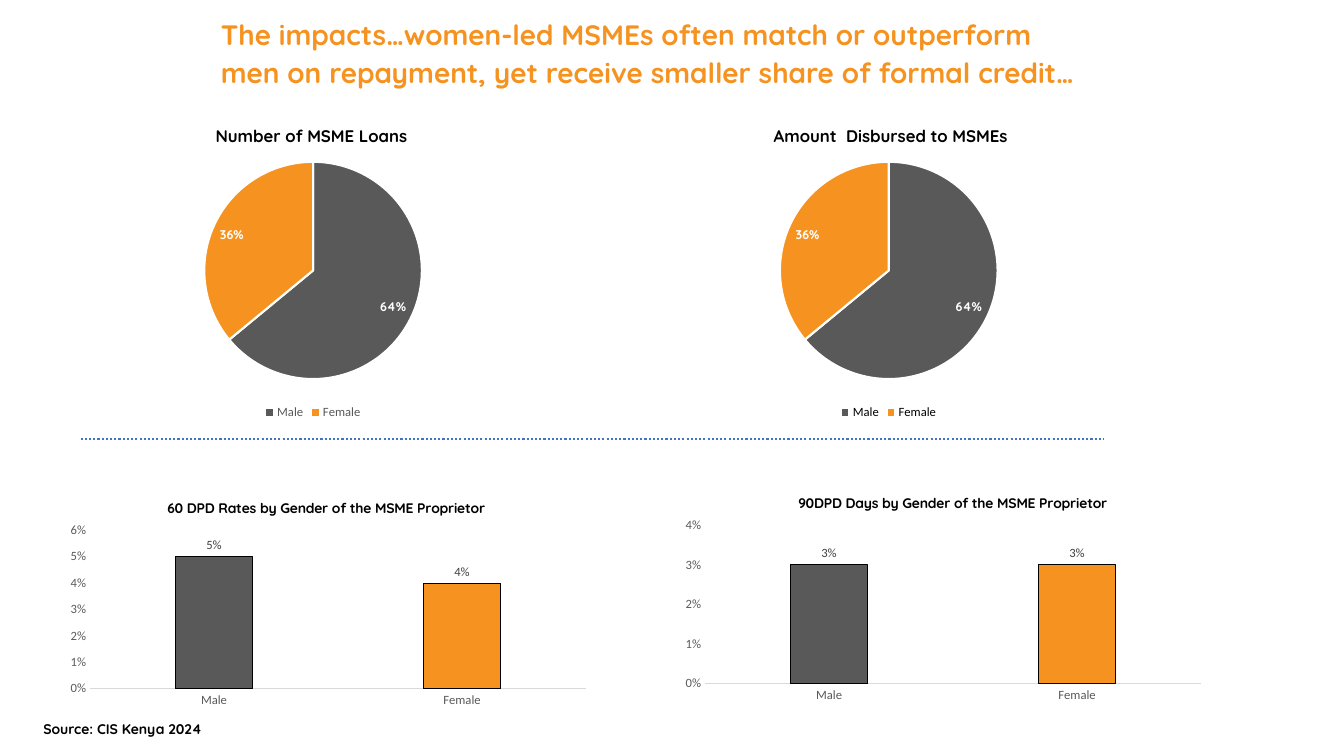
from pptx import Presentation
from pptx.chart.data import CategoryChartData
from pptx.dml.color import RGBColor
from pptx.enum.chart import XL_CHART_TYPE, XL_LABEL_POSITION, XL_LEGEND_POSITION, XL_TICK_MARK
from pptx.enum.dml import MSO_LINE
from pptx.enum.shapes import MSO_CONNECTOR
from pptx.enum.text import MSO_ANCHOR, PP_ALIGN
from pptx.oxml import parse_xml
from pptx.oxml.ns import nsdecls, qn
from pptx.util import Inches, Pt

PIE = XL_CHART_TYPE.PIE
COLUMN = XL_CHART_TYPE.COLUMN_CLUSTERED
INSIDE_END = XL_LABEL_POSITION.INSIDE_END
OUTSIDE_END = XL_LABEL_POSITION.OUTSIDE_END
LEGEND_BOTTOM = XL_LEGEND_POSITION.BOTTOM
NO_TICK = XL_TICK_MARK.NONE
DOTTED = MSO_LINE.ROUND_DOT
STRAIGHT = MSO_CONNECTOR.STRAIGHT
TOP, MIDDLE, LEFT = MSO_ANCHOR.TOP, MSO_ANCHOR.MIDDLE, PP_ALIGN.LEFT

COLORS = {
    "orange": "F69320",
    "grey": "595959",
    "label": "404040",
    "axis": "D9D9D9",
    "blue": "4472C4",
    "black": "000000",
    "white": "FFFFFF",
}
HEADING_FONT = "Quicksand"
CHART_FONT = "Calibri"
GENDERS = ("Male", "Female")
GENDER_COLORS = ("grey", "orange")


class GenderPage:
    def __init__(self, deck):
        self.deck = deck
        self.page = deck.slides.add_slide(deck.slide_layouts[5])

    def place(self, left, top, width, height):
        across, down = self.deck.slide_width / 100, self.deck.slide_height / 100
        return [round(share * unit) for share, unit in
                ((left, across), (top, down), (width, across), (height, down))]

    def color(self, name):
        return RGBColor.from_string(COLORS[name])

    def style(self, font, size, color, name=CHART_FONT, bold=False):
        font.size, font.name, font.bold = Pt(size), name, bold
        font.color.rgb = self.color(color)

    def outline(self, line, color, width=0.75):
        line.color.rgb = self.color(color)
        line.width = Pt(width)

    def fill_text(self, box, text, size, color, anchor):
        frame = box.text_frame
        frame.text = text
        frame.word_wrap = True
        frame.vertical_anchor = anchor
        para = frame.paragraphs[0]
        para.alignment = LEFT
        self.style(para.runs[0].font, size, color, HEADING_FONT, True)
        return para

    def title(self, text, area):
        box = self.page.shapes.title
        box.left, box.top, box.width, box.height = self.place(*area)
        para = self.fill_text(box, text, 20, "orange", TOP)
        para.line_spacing = 1.15
        para.space_after = Pt(8)

    def source(self, text, area):
        box = self.page.shapes.add_textbox(*self.place(*area))
        self.outline(box.line, "white")
        self.fill_text(box, text, 10, "black", MIDDLE)

    def divider(self, left, top, width):
        x, y, length, _ = self.place(left, top, width, 0)
        line = self.page.shapes.add_connector(STRAIGHT, x, y, x + length, y)
        self.outline(line.line, "blue", 1.5)
        line.line.dash_style = DOTTED
        line._element.spPr.append(parse_xml(f"<a:effectLst {nsdecls('a')}/>"))

    def layout(self, **shares):
        target = '<c:layoutTarget val="inner"/>' if "w" in shares else ""
        settings = '<c:xMode val="edge"/><c:yMode val="edge"/>'
        settings += "".join(f'<c:{key} val="{share}"/>' for key, share in shares.items())
        return parse_xml(f"<c:layout {nsdecls('c')}><c:manualLayout>{target}{settings}"
                         "</c:manualLayout></c:layout>")

    def chart(self, kind, heading, heading_size, heading_left, values, area, plot_area):
        data = CategoryChartData(number_format="0%")
        data.categories = GENDERS
        data.add_series("Series 1", values)
        chart = self.page.shapes.add_chart(kind, *self.place(*area), data).chart
        self.style(chart.font, 10, "black")
        chart.has_title = True
        chart.has_legend = False
        title = chart.chart_title
        title.text_frame.text = heading
        self.style(title.text_frame.paragraphs[0].runs[0].font,
                   heading_size, "black", HEADING_FONT, True)
        plot_element = chart.plots[0]._element.getparent()
        for parent in (title._element, plot_element):
            for old in parent.findall(qn("c:layout")):
                parent.remove(old)
        title._element.find(qn("c:tx")).addnext(self.layout(x=heading_left, y=0.05))
        plot_element.insert(0, self.layout(**plot_area))
        plot_element.getparent().addnext(parse_xml(
            f'<c:spPr {nsdecls("c", "a")}><a:noFill/><a:ln w="9525"><a:solidFill>'
            f'<a:srgbClr val="{COLORS["white"]}"/></a:solidFill></a:ln></c:spPr>'))
        return chart

    def paint(self, chart, edge, edge_width):
        for index, name in enumerate(GENDER_COLORS):
            part = chart.plots[0].series[0].points[index].format
            part.fill.solid()
            part.fill.fore_color.rgb = self.color(name)
            self.outline(part.line, edge, edge_width)

    def labels(self, chart, position, color, name, bold):
        labels = chart.plots[0].series[0].data_labels
        labels.show_value = True
        labels.number_format = "0%"
        labels.number_format_is_linked = False
        labels.position = position
        self.style(labels.font, 9, color, name, bold)

    def pie(self, heading, heading_left, values, area, legend_color):
        share = 0.39
        chart = self.chart(PIE, heading, 12, heading_left, values, area,
                           {"x": 0.5 - share / 2, "y": 0.18, "w": share, "h": 0.68})
        self.paint(chart, "white", 1.5)
        self.labels(chart, INSIDE_END, "white", HEADING_FONT, True)
        chart.has_legend = True
        chart.legend.position = LEGEND_BOTTOM
        chart.legend.include_in_layout = False
        self.style(chart.legend.font, 9, legend_color)

    def columns(self, heading, heading_left, values, area, top_value):
        chart = self.chart(COLUMN, heading, 10, heading_left, values, area,
                           {"x": 0.06, "y": 0.2, "w": 0.93, "h": 0.69})
        plot = chart.plots[0]
        plot.vary_by_categories = False
        plot.gap_width, plot.overlap = 219, -27
        self.paint(chart, "black", 0.75)
        self.labels(chart, OUTSIDE_END, "label", CHART_FONT, False)
        for axis in (chart.category_axis, chart.value_axis):
            axis.major_tick_mark = axis.minor_tick_mark = NO_TICK
            axis.has_major_gridlines = False
            self.style(axis.tick_labels.font, 9, "grey")
        self.outline(chart.category_axis.format.line, "axis")
        scale = chart.value_axis
        scale.format.line.fill.background()
        scale.minimum_scale, scale.maximum_scale, scale.major_unit = 0, top_value, 0.01
        scale.tick_labels.number_format = "0%"
        scale.tick_labels.number_format_is_linked = False


def main():
    deck = Presentation()
    deck.slide_width, deck.slide_height = Inches(13.33), Inches(7.5)
    page = GenderPage(deck)
    page.title("The impacts…women-led MSMEs often match or outperform men on repayment, "
               "yet receive smaller share of formal credit…", (15.68, 0.93, 66.24, 11.47))
    page.pie("Number of MSME Loans", 0.32, (0.64, 0.36),
             (2.48, 13.73, 41.63, 42.4), "grey")
    page.pie("Amount  Disbursed to MSMEs", 0.3, (0.64, 0.36),
             (44.11, 13.73, 44.04, 42.4), "black")
    page.divider(6, 58.13, 76.14)
    page.columns("60 DPD Rates by Gender of the MSME Proprietor", 0.2, (0.05, 0.04),
                 (4.28, 64, 39.76, 30.53), 0.06)
    page.columns("90DPD Days by Gender of the MSME Proprietor", 0.23, (0.03, 0.03),
                 (50.04, 63.33, 39.76, 30.53), 0.04)
    page.source("Source: CIS Kenya 2024", (2.48, 94.67, 38.41, 3.6))
    deck.save("out.pptx")


if __name__ == "__main__":
    main()
